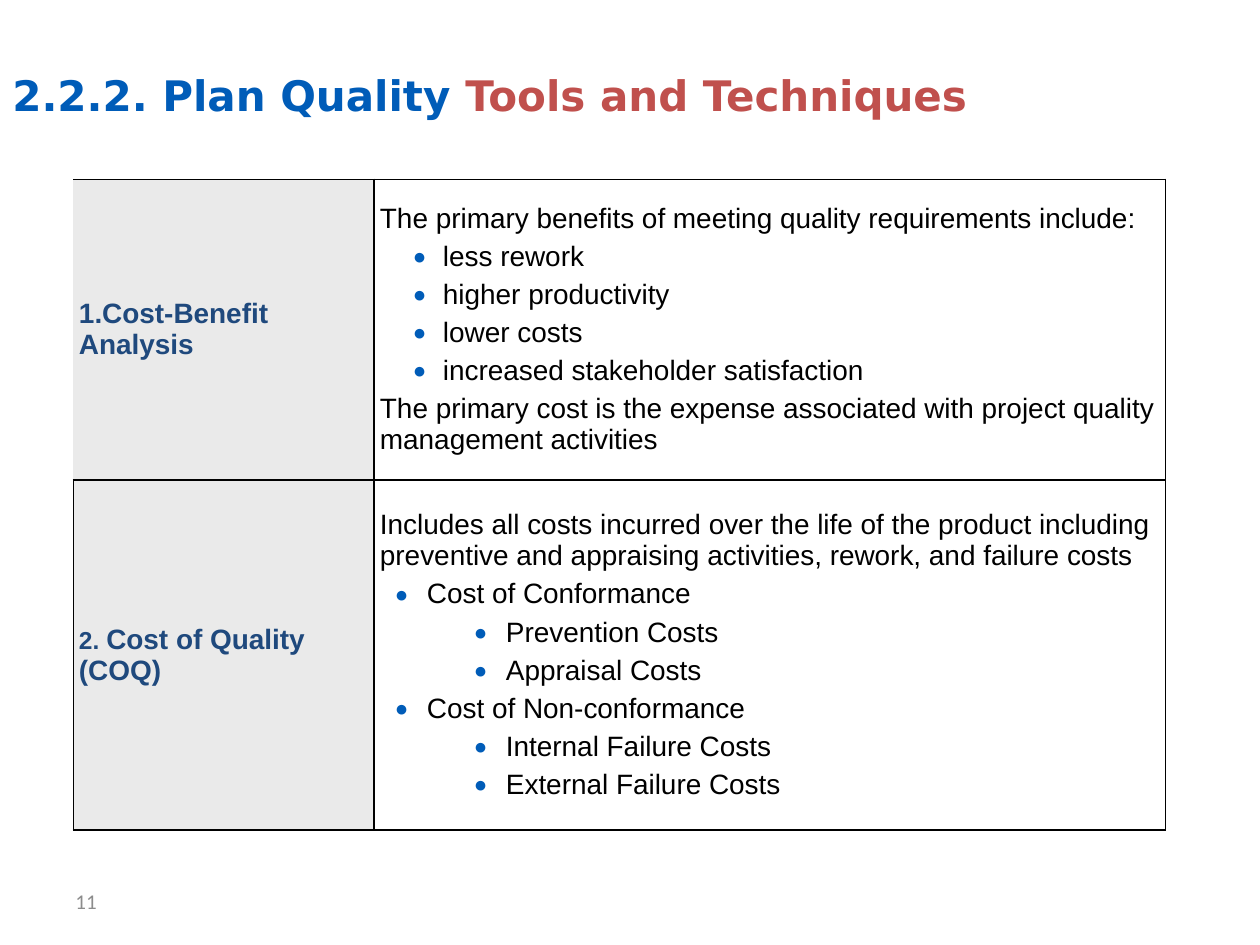
import pptx
import pptx.dml.color
import pptx.enum.text
import pptx.oxml
import pptx.oxml.ns
import pptx.util

RGB = pptx.dml.color.RGBColor
BLUE = RGB(0x00, 0x5C, 0xB8)
RED = RGB(0xC0, 0x50, 0x4D)
NAVY = RGB(0x1F, 0x49, 0x7D)
GREY = RGB(0x8C, 0x8C, 0x8C)
PALE = RGB(0xEA, 0xEA, 0xEA)
BLACK = RGB(0x00, 0x00, 0x00)
MIDDLE = pptx.enum.text.MSO_ANCHOR.MIDDLE
TOP = pptx.enum.text.MSO_ANCHOR.TOP
PX_PER_INCH = 126

BENEFIT_INDENT = (63, -30)
COST_INDENT = (47, -32)
DETAIL_INDENT = (126, -32)

TOPICS = [
    {
        "label": [("1.Cost-Benefit Analysis", 16)],
        "height": 301,
        "label_borders": {"L": 0, "R": 1, "T": 0.5, "B": 1},
        "body_borders": {"L": 1, "R": 0.5, "T": 0.5, "B": 1},
        "body": [
            ("The primary benefits of meeting quality requirements include:", None),
            ("less rework", BENEFIT_INDENT),
            ("higher productivity", BENEFIT_INDENT),
            ("lower costs", BENEFIT_INDENT),
            ("increased stakeholder satisfaction", BENEFIT_INDENT),
            ("The primary cost is the expense associated with project quality "
             "management activities", None),
        ],
    },
    {
        "label": [("2. ", 14), ("Cost of Quality (COQ)", 16)],
        "height": 350,
        "label_borders": {"L": 0.5, "R": 1, "T": 1, "B": 1},
        "body_borders": {"L": 1, "R": 0.5, "T": 1, "B": 1},
        "body": [
            ("Includes all costs incurred over the life of the product including "
             "preventive and appraising activities, rework, and failure costs", None),
            ("Cost of Conformance", COST_INDENT),
            ("Prevention Costs", DETAIL_INDENT),
            ("Appraisal Costs", DETAIL_INDENT),
            ("Cost of Non-conformance", COST_INDENT),
            ("Internal Failure Costs", DETAIL_INDENT),
            ("External Failure Costs", DETAIL_INDENT),
        ],
    },
]


def px(length):
    """Turn a length in px into EMU."""
    return pptx.util.Emu(round(length * 914400 / PX_PER_INCH))


def add_span(para, text, font, size, color, bold=False):
    """Add one styled run to a paragraph."""
    span = para.add_run()
    span.text = text
    span.font.name = font
    span.font.size = pptx.util.Pt(size)
    span.font.bold = bold
    span.font.color.rgb = color


def add_line(page, box, anchor, spans):
    """Add a one-line text box made of the given spans."""
    frame = page.shapes.add_textbox(*map(px, box)).text_frame
    frame.word_wrap = True
    frame.vertical_anchor = anchor
    for span in spans:
        add_span(frame.paragraphs[0], *span)


def add_bullet(para, indent):
    """Give a paragraph a blue round bullet and a hanging indent."""
    left, hang = indent
    props = para._p.get_or_add_pPr()
    props.set("marL", str(px(left)))
    props.set("indent", str(px(hang)))
    space = pptx.oxml.ns.nsdecls("a")
    for xml in (
        f'<a:buClr {space}><a:srgbClr val="{BLUE}"/></a:buClr>',
        f'<a:buSzPct {space} val="80000"/>',
        f'<a:buFont {space} typeface="Arial"/>',
        f'<a:buChar {space} char="●"/>',
    ):
        props.append(pptx.oxml.parse_xml(xml))


def set_borders(cell, widths):
    """Draw the cell borders with widths in points, zero meaning none."""
    props = cell._tc.get_or_add_tcPr()
    space = pptx.oxml.ns.nsdecls("a")
    for side, width in widths.items():
        paint = f'<a:solidFill><a:srgbClr val="{BLACK}"/></a:solidFill>' if width else "<a:noFill/>"
        props.append(pptx.oxml.parse_xml(
            f'<a:ln{side} {space} w="{pptx.util.Pt(width)}">{paint}</a:ln{side}>'))


def prepare_cell(cell, borders):
    """Set margins, anchor and borders, and return the text frame."""
    cell.margin_left = cell.margin_right = px(6)
    cell.margin_top = cell.margin_bottom = px(6)
    cell.vertical_anchor = MIDDLE
    set_borders(cell, borders)
    return cell.text_frame


def fill_label(cell, topic):
    """Write the topic name on a pale ground."""
    para = prepare_cell(cell, topic["label_borders"]).paragraphs[0]
    para.space_before = pptx.util.Pt(4)
    for text, size in topic["label"]:
        add_span(para, text, "Arial", size, NAVY, True)
    cell.fill.solid()
    cell.fill.fore_color.rgb = PALE


def fill_body(cell, topic):
    """Write the topic's sentences and bullets."""
    frame = prepare_cell(cell, topic["body_borders"])
    for index, (text, indent) in enumerate(topic["body"]):
        para = frame.add_paragraph() if index else frame.paragraphs[0]
        para.space_before = pptx.util.Pt(4)
        if indent:
            add_bullet(para, indent)
        add_span(para, text, "Arial", 16, BLACK)
    cell.fill.background()


def add_topics(page, box):
    """Add the table of tools and techniques."""
    table = page.shapes.add_table(len(TOPICS), 2, *map(px, box)).table
    table.first_row = table.horz_banding = False
    label_width = 301
    table.columns[0].width = px(label_width)
    table.columns[1].width = px(box[2] - label_width)
    for row, topic in enumerate(TOPICS):
        table.rows[row].height = px(topic["height"])
        fill_label(table.cell(row, 0), topic)
        fill_body(table.cell(row, 1), topic)


def main():
    """Build the slide and save the deck."""
    deck = pptx.Presentation()
    deck.slide_width, deck.slide_height = px(1260), px(945)
    page = deck.slides.add_slide(deck.slide_layouts[6])
    add_line(page, (63, 876, 294, 50), MIDDLE, [("11", "Calibri", 12, GREY)])
    add_line(page, (0, 63, 1197, 105), TOP, [
        ("2.2.2. Plan Quality ", "DejaVu Sans", 24, BLUE, True),
        ("Tools and Techniques", "DejaVu Sans", 24, RED, True),
    ])
    add_topics(page, (73, 179, 1092, 651))
    deck.save("out.pptx")


if __name__ == "__main__":
    main()
